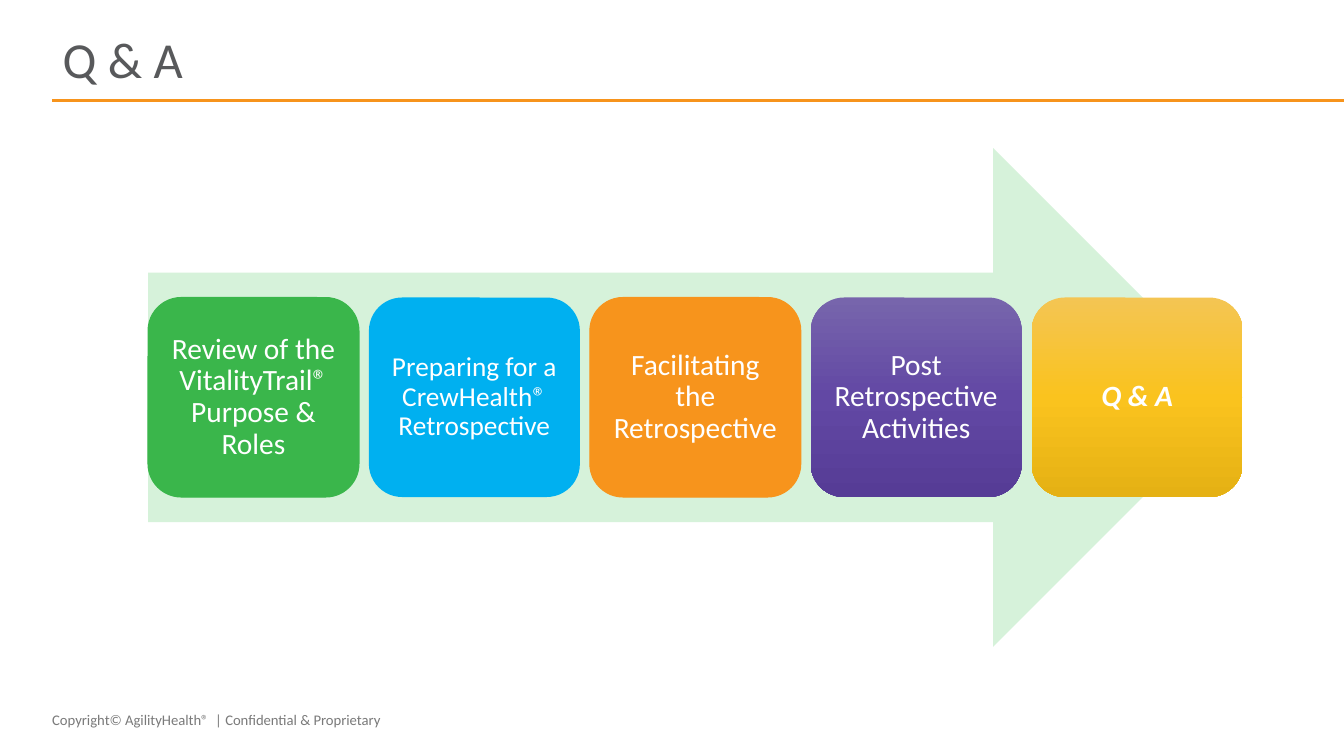
from copy import deepcopy

from lxml import etree
from pptx import Presentation
from pptx.dml.color import RGBColor
from pptx.enum.shapes import MSO_CONNECTOR, MSO_SHAPE
from pptx.enum.text import MSO_ANCHOR, PP_ALIGN
from pptx.oxml.ns import qn
from pptx.util import Pt

ARROW, ROUNDED = MSO_SHAPE.RIGHT_ARROW, MSO_SHAPE.ROUNDED_RECTANGLE
STRAIGHT = MSO_CONNECTOR.STRAIGHT
MIDDLE = MSO_ANCHOR.MIDDLE
LEFT, CENTER = PP_ALIGN.LEFT, PP_ALIGN.CENTER


def rgb(value):
    return RGBColor.from_string(value)


def style(paragraph, size, color, align=LEFT):
    paragraph.alignment = align
    paragraph.font.name = "Calibri"
    paragraph.font.size = Pt(size)
    paragraph.font.color.rgb = rgb(color)


prs = Presentation()
prs.slide_width, prs.slide_height = Pt(960), Pt(540)
slide = prs.slides.add_slide(prs.slide_layouts[5])
shapes = slide.shapes

# Footer
footer = shapes.add_textbox(Pt(30.24), Pt(504), Pt(324), Pt(20.16))
footer.text_frame.word_wrap = True
footer.text_frame.text = "Copyright© AgilityHealth®  | Confidential & Proprietary"
style(footer.text_frame.paragraphs[0], 10.5, "7A7A7A")

# Title and the rule below it
title = shapes.title
title.left, title.top, title.width, title.height = Pt(37.44), Pt(19.44), Pt(885), Pt(50.4)
title.text_frame.text = "Q & A"
title.text_frame.vertical_anchor = MIDDLE
title.text_frame.paragraphs[0].line_spacing = 0.9
style(title.text_frame.paragraphs[0], 36, "58595B")

rule = shapes.add_connector(STRAIGHT, Pt(37.44), Pt(71.6), Pt(960), Pt(71.6))
rule.line.color.rgb = rgb("F7941C")
rule.line.width = Pt(2)
etree.SubElement(rule._element.spPr, qn("a:effectLst"))

# Agenda arrow
arrow = shapes.add_shape(ARROW, Pt(105.75), Pt(105.75), Pt(781.75), Pt(356.25))
arrow.shadow.inherit = False
arrow.fill.solid()
arrow.fill.fore_color.rgb = rgb("D6F2DA")
arrow.line.fill.background()

# Agenda steps: text, size, fill colours from top to bottom, outline colour
steps = [
    ("Review of the VitalityTrail® Purpose & Roles", 21, ["3AB64B"], "3AB64B"),
    ("Preparing for a CrewHealth® Retrospective", 19.5, ["00B0F0"], None),
    ("Facilitating the Retrospective", 21, ["F7941C"], "F7941C"),
    ("Post Retrospective Activities", 21, ["7765AC", "6248A4", "563C96"], None),
    ("Q & A", 21, ["F4C553", "FAC31E", "E5B114"], None),
]
STEP_WIDTH, STEP_PITCH = 150.7, 157.8

for i, (label, size, colors, outline) in enumerate(steps):
    step = shapes.add_shape(ROUNDED, Pt(105.75 + i * STEP_PITCH), Pt(212.5),
                            Pt(STEP_WIDTH), Pt(142.5))
    step.shadow.inherit = False
    if len(colors) == 1:
        step.fill.solid()
        step.fill.fore_color.rgb = rgb(colors[0])
    else:
        step.fill.gradient()
        step.fill.gradient_angle = 270
        stop_list = step._element.spPr.find(".//" + qn("a:gsLst"))
        stop_list.insert(1, deepcopy(stop_list[0]))
        for stop, position, color in zip(step.fill.gradient_stops, (0, 0.5, 1), colors):
            stop.position = position
            stop.color.rgb = rgb(color)
    if outline:
        step.line.color.rgb = rgb(outline)
        step.line.width = Pt(0.75)
    else:
        step.line.fill.background()

    frame = step.text_frame
    frame.word_wrap = True
    frame.vertical_anchor = MIDDLE
    inset = Pt(6.3 if size == 21 else 5.85)
    frame.margin_left = frame.margin_right = frame.margin_top = frame.margin_bottom = inset
    frame.text = label
    paragraph = frame.paragraphs[0]
    paragraph.line_spacing = 0.9
    style(paragraph, size, "FFFFFF", CENTER)
    if label == "Q & A":
        paragraph.font.bold = paragraph.font.italic = True

prs.save("out.pptx")
